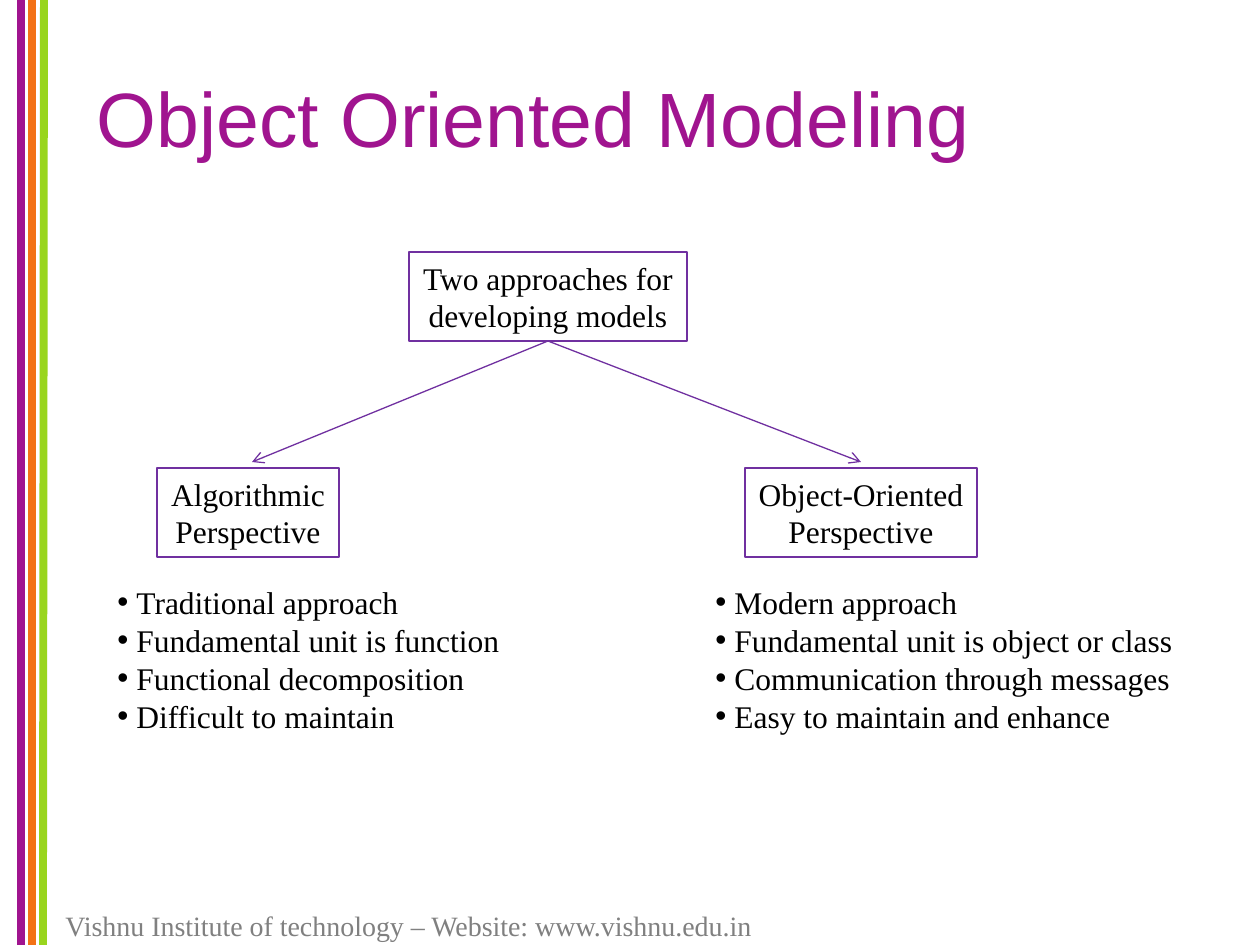
"""Build the Object Oriented Modeling slide with its two approaches."""
from lxml.etree import SubElement
from pptx import Presentation
from pptx.dml.color import RGBColor
from pptx.enum.shapes import MSO_CONNECTOR, MSO_SHAPE
from pptx.enum.text import MSO_ANCHOR, PP_ALIGN
from pptx.oxml.ns import qn
from pptx.util import Pt

PURPLE = RGBColor(0xA0, 0x14, 0x8F)
ORANGE = RGBColor(0xF3, 0x72, 0x16)
GREEN = RGBColor(0x99, 0xD5, 0x1E)
VIOLET = RGBColor(0x70, 0x30, 0xA0)
GRAY = RGBColor(0x80, 0x80, 0x80)
BLACK = RGBColor(0, 0, 0)
SERIF = "Times New Roman"
PX = 914400 / 126
WIDTH, HEIGHT = 1260, 945
BULLET_INDENT = 19

TITLE = "Object Oriented Modeling"
FOOTER = "Vishnu Institute of technology – Website: www.vishnu.edu.in"
STRIPES = [(21, 21, PURPLE), (32, 32, ORANGE), (44, 43, GREEN)]
ROOT = (["Two approaches for", "developing models"], (409, 252, 278, 89))
BRANCHES = [
    {
        "name": ["Algorithmic", "Perspective"],
        "box": (157, 468, 182, 89),
        "tip": (252, 462),
        "points": ["Traditional approach", "Fundamental unit is function",
                   "Functional decomposition", "Difficult to maintain"],
        "list": (105, 577, 411, 165),
    },
    {
        "name": ["Object-Oriented", "Perspective"],
        "box": (745, 468, 232, 89),
        "tip": (861, 462),
        "points": ["Modern approach", "Fundamental unit is object or class",
                   "Communication through messages", "Easy to maintain and enhance"],
        "list": (703, 577, 488, 165),
    },
]


def emu(*lengths):
    return [round(n * PX) for n in lengths]


def write(sp, lines, size, color, align=PP_ALIGN.LEFT, font=SERIF, bullets=False):
    tf = sp.text_frame
    tf.text = "\n".join(lines)
    for p in tf.paragraphs:
        p.alignment = align
        if bullets:
            indent, = emu(BULLET_INDENT)
            pPr = p._p.get_or_add_pPr()
            pPr.set("marL", str(indent))
            pPr.set("indent", str(-indent))
            SubElement(pPr, qn("a:buFont"), typeface="Arial")
            SubElement(pPr, qn("a:buChar"), char="•")
        for r in p.runs:
            r.font.name, r.font.size = font, Pt(size)
            r.font.color.rgb = color
    return tf


def add_text(slide, box, lines, size, color, bullets=False):
    sp = slide.shapes.add_textbox(*emu(*box))
    write(sp, lines, size, color, bullets=bullets).word_wrap = False


def add_box(slide, lines, box):
    sp = slide.shapes.add_shape(MSO_SHAPE.RECTANGLE, *emu(*box))
    sp.shadow.inherit = False
    sp.fill.background()
    sp.line.color.rgb, sp.line.width = VIOLET, Pt(0.75)
    write(sp, lines, 18, BLACK, PP_ALIGN.CENTER).word_wrap = False
    return sp


def add_line(slide, start, end, color, width):
    line = slide.shapes.add_connector(MSO_CONNECTOR.STRAIGHT, *emu(*start, *end))
    line.line.color.rgb, line.line.width = color, Pt(width)
    SubElement(line._element.spPr, qn("a:effectLst"))
    return line


def main():
    prs = Presentation()
    prs.slide_width, prs.slide_height = emu(WIDTH, HEIGHT)
    slide = prs.slides.add_slide(prs.slide_layouts[5])

    for top_x, bottom_x, color in STRIPES:
        add_line(slide, (top_x, 0), (bottom_x, HEIGHT), color, 4.5)
    add_text(slide, (53, 902, 722, 47), [FOOTER], 16, GRAY)

    title = slide.shapes.title
    title.left, title.top, title.width, title.height = emu(84, 38, 1113, 157)
    tf = write(title, [TITLE], 44, PURPLE, font="Arial")
    tf.vertical_anchor = MSO_ANCHOR.MIDDLE

    root = add_box(slide, *ROOT)
    x, y, w, h = ROOT[1]
    for branch in BRANCHES:
        add_box(slide, branch["name"], branch["box"])
        arrow = add_line(slide, (x + w / 2, y + h), branch["tip"], VIOLET, 0.75)
        arrow.begin_connect(root, 2)
        SubElement(arrow.line._get_or_add_ln(), qn("a:tailEnd"), type="arrow")
        add_text(slide, branch["list"], branch["points"], 18, BLACK, bullets=True)

    prs.save("out.pptx")


if __name__ == "__main__":
    main()
